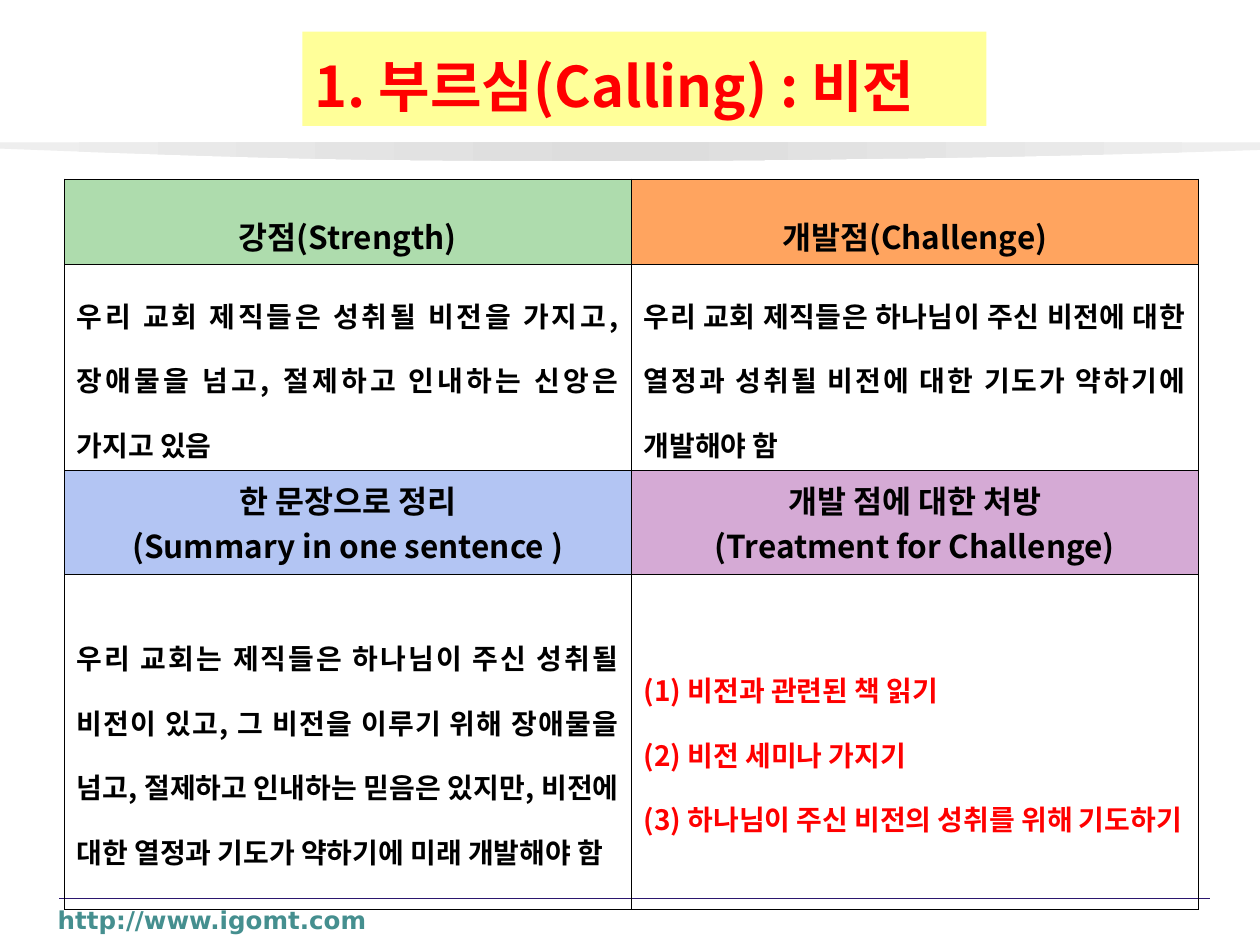
from dataclasses import dataclass
from typing import Optional

from lxml import etree
from pptx import Presentation
from pptx import util as u
from pptx.dml.color import RGBColor
from pptx.enum import shapes, text
from pptx.oxml import parse_xml
from pptx.oxml.ns import nsdecls, qn

COLORS = {
    "black": "000000", "red": "FF0000", "teal": "458F8F", "navy": "2B166E",
    "yellow": "FFFF99", "green": "AEDCAD", "orange": "FFA45F",
    "blue": "B3C5F3", "purple": "D5AAD5",
    "band_edge": "EEEEEE", "band_middle": "DDDDDD",
}
KOREAN = "Noto Sans CJK KR"
CENTER, JUSTIFY = text.PP_ALIGN.CENTER, text.PP_ALIGN.JUSTIFY
HANGING = 0.38


@dataclass
class Entry:
    lines: list[str]
    size: int = 16
    color: str = "black"
    fill: Optional[str] = None
    align: text.PP_ALIGN = JUSTIFY
    spacing: Optional[float] = 1.6
    hanging: bool = False


def heading(lines: list[str], fill: str, spacing: Optional[float] = None) -> Entry:
    return Entry(lines, size=18, fill=fill, align=CENTER, spacing=spacing)


GRID = [
    [heading(["강점(Strength)"], "green", 1.6),
     heading(["개발점(Challenge)"], "orange", 1.6)],
    [Entry(["우리 교회 제직들은 성취될 비전을 가지고, 장애물을 넘고, "
            "절제하고 인내하는 신앙은 가지고 있음"]),
     Entry(["우리 교회 제직들은 하나님이 주신 비전에 대한 열정과 "
            "성취될 비전에 대한 기도가 약하기에 개발해야 함"])],
    [heading(["한 문장으로 정리", "(Summary in one sentence )"], "blue"),
     heading(["개발 점에 대한 처방", "(Treatment for Challenge)"], "purple")],
    [Entry(["우리 교회는 제직들은 하나님이 주신 성취될 비전이 있고, 그 비전을 "
            "이루기 위해 장애물을 넘고, 절제하고 인내하는 믿음은 있지만, "
            "비전에 대한 열정과 기도가 약하기에 미래 개발해야 함"]),
     Entry(["(1) 비전과 관련된 책 읽기", "(2) 비전 세미나 가지기",
            "(3) 하나님이 주신 비전의 성취를 위해 기도하기"],
           color="red", hanging=True)],
]
ROW_HEIGHTS = [0.68, 1.63, 0.83, 2.66]

# Lower edge of the header band: start point, then cubic curves
BAND_START = (0, 1.18)
BAND_CURVES = [
    [(0.53, 1.2), (2.04, 1.26), (3.19, 1.27)],
    [(4.34, 1.28), (5.76, 1.28), (6.89, 1.26)],
    [(8.03, 1.25), (9.49, 1.21), (10.01, 1.19)],
]


def rgb(name: str) -> RGBColor:
    return RGBColor.from_string(COLORS[name])


def write(paragraph, words: str, size: int, color: str, face: str = KOREAN) -> None:
    run = paragraph.add_run()
    run.text = words
    for attribute, value in {"size": u.Pt(size), "bold": True, "name": face}.items():
        setattr(run.font, attribute, value)
    run.font.color.rgb = rgb(color)
    east_asian = etree.SubElement(run.font._element, qn("a:ea"))
    east_asian.set("typeface", face)


def hang(paragraph) -> None:
    properties = paragraph._p.get_or_add_pPr()
    properties.set("marL", str(u.Inches(HANGING)))
    properties.set("indent", str(-u.Inches(HANGING)))


def curve_points(start: tuple, curve: list, steps: int = 12) -> list[tuple]:
    """Sample one cubic curve, leaving out its start point."""
    points = []
    for step in range(1, steps + 1):
        t = step / steps
        weights = [(1 - t) ** 3, 3 * t * (1 - t) ** 2, 3 * t * t * (1 - t), t ** 3]
        controls = [start, *curve]
        points.append(tuple(sum(w * c[axis] for w, c in zip(weights, controls))
                            for axis in (0, 1)))
    return points


def add_band(slide) -> None:
    edge = [BAND_START]
    for curve in BAND_CURVES:
        edge += curve_points(edge[-1], curve)
    builder = slide.shapes.build_freeform(0, u.Inches(1.13), scale=1.0)
    outline = edge + [(10.01, 1.13)]
    builder.add_line_segments([(u.Inches(x), u.Inches(y)) for x, y in outline])
    band = builder.convert_to_shape()
    band.shadow.inherit = False
    band.line.fill.background()
    stops = "".join(
        f'<a:gs pos="{position}"><a:srgbClr val="{COLORS[name]}"/></a:gs>'
        for position, name in [(0, "band_edge"), (50000, "band_middle"),
                               (100000, "band_edge")])
    gradient = parse_xml(f'<a:gradFill {nsdecls("a")}><a:gsLst>{stops}</a:gsLst>'
                         '<a:lin ang="0" scaled="0"/></a:gradFill>')
    band._element.spPr.find(qn("a:custGeom")).addnext(gradient)


def add_footer(slide) -> None:
    y = u.Inches(7.13)
    rule = slide.shapes.add_connector(shapes.MSO_CONNECTOR.STRAIGHT,
                                      u.Inches(0.47), y, u.Inches(9.6), y)
    rule.line.color.rgb = rgb("navy")
    rule.line.width = u.Pt(0.75)
    etree.SubElement(rule._element.spPr, qn("a:effectLst"))
    address = slide.shapes.add_textbox(u.Inches(0.36), u.Inches(7.13),
                                       u.Inches(4.49), u.Inches(0.29))
    address.text_frame.word_wrap = True
    paragraph = address.text_frame.paragraphs[0]
    hang(paragraph)
    write(paragraph, "http://www.igomt.com", 14, "teal", "DejaVu Sans")


def add_borders(cell) -> None:
    properties = cell._tc.get_or_add_tcPr()
    for index, side in enumerate(("lnL", "lnR", "lnT", "lnB")):
        properties.insert(index, parse_xml(
            f'<a:{side} {nsdecls("a")} w="{u.Pt(0.28)}"><a:solidFill>'
            f'<a:srgbClr val="{COLORS["black"]}"/></a:solidFill></a:{side}>'))


def fill_cell(cell, entry: Entry) -> None:
    cell.vertical_anchor = text.MSO_ANCHOR.MIDDLE
    if entry.fill:
        cell.fill.solid()
        cell.fill.fore_color.rgb = rgb(entry.fill)
    else:
        cell.fill.background()
    add_borders(cell)
    frame = cell.text_frame
    for index, line in enumerate(entry.lines):
        paragraph = frame.add_paragraph() if index else frame.paragraphs[0]
        paragraph.alignment = entry.align
        paragraph.line_spacing = entry.spacing
        if entry.hanging:
            hang(paragraph)
        write(paragraph, line, entry.size, entry.color)


def add_grid(slide) -> None:
    holder = slide.shapes.add_table(len(GRID), 2, u.Inches(0.51), u.Inches(1.42),
                                    u.Inches(9), u.Inches(sum(ROW_HEIGHTS)))
    table = holder.table
    table.first_row = table.horz_banding = False
    for row, height in zip(table.rows, ROW_HEIGHTS):
        row.height = u.Inches(height)
    for r, entries in enumerate(GRID):
        for c, entry in enumerate(entries):
            fill_cell(table.cell(r, c), entry)


def add_title(slide) -> None:
    title = slide.shapes.add_shape(shapes.MSO_SHAPE.RECTANGLE, u.Inches(2.4),
                                   u.Inches(0.25), u.Inches(5.43), u.Inches(0.75))
    title.shadow.inherit = False
    title.fill.solid()
    title.fill.fore_color.rgb = rgb("yellow")
    title.line.fill.background()
    frame = title.text_frame
    for attribute, value in {"word_wrap": True,
                             "auto_size": text.MSO_AUTO_SIZE.SHAPE_TO_FIT_TEXT,
                             "vertical_anchor": text.MSO_ANCHOR.TOP}.items():
        setattr(frame, attribute, value)
    paragraph = frame.paragraphs[0]
    paragraph.alignment = text.PP_ALIGN.LEFT
    paragraph.line_spacing = u.Pt(46)
    write(paragraph, "1. 부르심(Calling) : 비전", 32, "red")


def main() -> None:
    deck = Presentation()
    deck.slide_width, deck.slide_height = u.Inches(10), u.Inches(7.5)
    slide = deck.slides.add_slide(deck.slide_layouts[6])
    add_band(slide)
    add_footer(slide)
    add_grid(slide)
    add_title(slide)
    deck.save("out.pptx")


if __name__ == "__main__":
    main()
